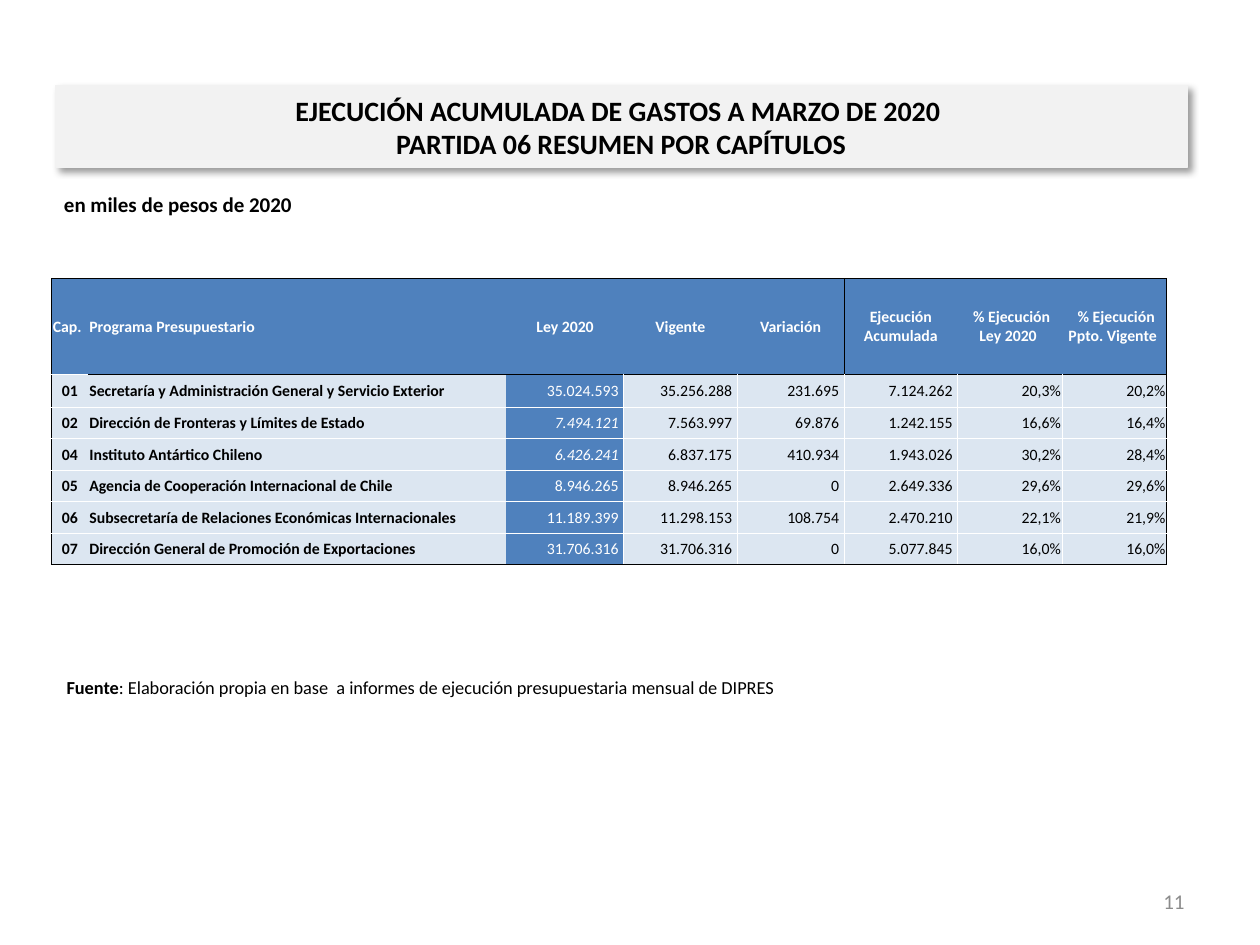
from lxml import etree
from pptx import Presentation
from pptx.dml.color import RGBColor
from pptx.enum.shapes import MSO_SHAPE
from pptx.enum.text import MSO_ANCHOR, PP_ALIGN
from pptx.oxml import parse_xml
from pptx.oxml.ns import nsdecls, qn
from pptx.util import Inches, Pt

LEFT, CENTER, RIGHT = PP_ALIGN.LEFT, PP_ALIGN.CENTER, PP_ALIGN.RIGHT
TOP, MIDDLE = MSO_ANCHOR.TOP, MSO_ANCHOR.MIDDLE
RECTANGLE = MSO_SHAPE.RECTANGLE

BLACK = RGBColor(0x00, 0x00, 0x00)
WHITE = RGBColor(0xFF, 0xFF, 0xFF)
GREY = RGBColor(0x8C, 0x8C, 0x8C)
BANNER = RGBColor(0xF2, 0xF2, 0xF2)
BLUE = RGBColor(0x4F, 0x81, 0xBD)
PALE_BLUE = RGBColor(0xDC, 0xE6, 0xF1)
FONT = "Calibri"

COL_WIDTHS = [0.29, 3.32, 0.93, 0.9, 0.85, 0.9, 0.83, 0.83]
ROW_HEIGHTS = [0.76, 0.26] + [0.25] * 5
HEADERS = ["Cap.", "Programa Presupuestario", "Ley 2020", "Vigente", "Variación",
           "Ejecución Acumulada", " % Ejecución Ley 2020 ", " % Ejecución Ppto. Vigente "]
CHAPTERS = [
    ["01", "Secretaría y Administración General y Servicio Exterior",
     "35.024.593", "35.256.288", "231.695", "7.124.262", "20,3%", "20,2%"],
    ["02", "Dirección de Fronteras y Límites de Estado",
     "7.494.121", "7.563.997", "69.876", "1.242.155", "16,6%", "16,4%"],
    ["04", "Instituto Antártico Chileno",
     "6.426.241", "6.837.175", "410.934", "1.943.026", "30,2%", "28,4%"],
    ["05", "Agencia de Cooperación Internacional de Chile",
     "8.946.265", "8.946.265", "0", "2.649.336", "29,6%", "29,6%"],
    ["06", "Subsecretaría de Relaciones Económicas Internacionales",
     "11.189.399", "11.298.153", "108.754", "2.470.210", "22,1%", "21,9%"],
    ["07", "Dirección General de Promoción de Exportaciones",
     "31.706.316", "31.706.316", "0", "5.077.845", "16,0%", "16,0%"],
]
LAW_COL, VARIATION_COL, PERCENT_COL = 2, 4, 6
ITALIC_ROWS = (2, 3)


def add_run(p, text, size, color=BLACK, bold=False, italic=False):
    r = p.add_run()
    r.text = text
    r.font.name, r.font.size = FONT, Pt(size)
    r.font.bold, r.font.italic = bold, italic
    r.font.color.rgb = color


def add_label(s, box, runs, size, color=BLACK, align=LEFT, anchor=TOP):
    """Text box whose runs are (text, bold) pairs."""
    tf = s.shapes.add_textbox(*map(Inches, box)).text_frame
    tf.word_wrap = True
    tf.vertical_anchor = anchor
    p = tf.paragraphs[0]
    p.alignment = align
    for text, bold in runs:
        add_run(p, text, size, color, bold)


def add_banner(s, box):
    sp = s.shapes.add_shape(RECTANGLE, *map(Inches, box))
    sp.fill.solid()
    sp.fill.fore_color.rgb = BANNER
    sp.line.color.rgb = BANNER
    sp.line.width = Pt(0.75)
    # Soft shadow towards the lower right
    sp.shadow.inherit = False
    sp.element.spPr.find(qn("a:effectLst")).append(parse_xml(
        f'<a:outerShdw {nsdecls("a")} blurRad="{Pt(4)}" dist="{Pt(3)}" dir="2700000" '
        'algn="tl" rotWithShape="0"><a:srgbClr val="000000"><a:alpha val="40000"/>'
        '</a:srgbClr></a:outerShdw>'))
    tf = sp.text_frame
    tf.word_wrap = True
    tf.vertical_anchor = MIDDLE
    p = tf.paragraphs[0]
    p.alignment = CENTER
    add_run(p, "EJECUCIÓN ACUMULADA DE GASTOS A MARZO DE 2020 ", 16, bold=True)
    p.add_line_break()
    add_run(p, "PARTIDA 06 RESUMEN POR CAPÍTULOS", 16, bold=True)


def vertical_edge(row, edge):
    """Colour of the vertical line before column number `edge`."""
    if edge in (0, len(HEADERS)):
        return BLACK
    if row == 0:
        return BLACK if edge == VARIATION_COL + 1 else None
    return WHITE if edge > LAW_COL else None


def horizontal_edge(edge, col):
    """Colour of the horizontal line above row number `edge`."""
    if edge in (0, len(CHAPTERS) + 1) or (edge == 1 and col > 0):
        return BLACK
    return WHITE


def set_borders(cell, row, col):
    tcPr = cell._tc.get_or_add_tcPr()
    edges = {"lnL": vertical_edge(row, col), "lnR": vertical_edge(row, col + 1),
             "lnT": horizontal_edge(row, col), "lnB": horizontal_edge(row + 1, col)}
    for tag, color in edges.items():
        ln = etree.SubElement(tcPr, qn(f"a:{tag}"), w=str(Pt(0.5)))
        if color is None:
            etree.SubElement(ln, qn("a:noFill"))
        else:
            fill = etree.SubElement(ln, qn("a:solidFill"))
            etree.SubElement(fill, qn("a:srgbClr"), val=str(color))


def cell_align(row, col):
    if row == 0:
        return LEFT if col < LAW_COL else CENTER
    return {0: CENTER, 1: LEFT}.get(col, RIGHT)


def fill_cell(cell, text, row, col):
    header = row == 0
    on_blue = header or col == LAW_COL
    amount = not header and LAW_COL <= col < PERCENT_COL
    set_borders(cell, row, col)
    cell.fill.solid()
    cell.fill.fore_color.rgb = BLUE if on_blue else PALE_BLUE
    cell.margin_left = cell.margin_top = Inches(0.01)
    cell.margin_right = Inches(0.04 if amount else 0.01)
    cell.margin_bottom = 0
    cell.vertical_anchor = MIDDLE
    p = cell.text_frame.paragraphs[0]
    p.alignment = cell_align(row, col)
    add_run(p, text, 9, WHITE if on_blue else BLACK, bold=header or col < LAW_COL,
            italic=col == LAW_COL and row in ITALIC_ROWS)


def add_budget_table(s, box):
    rows = [HEADERS] + CHAPTERS
    table = s.shapes.add_table(len(rows), len(HEADERS), *map(Inches, box)).table
    table.first_row = table.horz_banding = False
    for column, width in zip(table.columns, COL_WIDTHS):
        column.width = Inches(width)
    for table_row, height in zip(table.rows, ROW_HEIGHTS):
        table_row.height = Inches(height)
    for i, texts in enumerate(rows):
        for j, text in enumerate(texts):
            fill_cell(table.cell(i, j), text, i, j)


def main():
    prs = Presentation()
    prs.slide_width, prs.slide_height = Inches(10), Inches(7.5)
    s = prs.slides.add_slide(prs.slide_layouts[6])

    # Page number, source and unit
    add_label(s, (7.17, 6.95, 2.33, 0.4), [("11", False)], 12, GREY, RIGHT, MIDDLE)
    add_label(s, (0.43, 5.32, 9.19, 0.4),
              [("Fuente", True),
               (": Elaboración propia en base  a informes de ejecución "
                "presupuestaria mensual de DIPRES", False)], 10.5)
    add_label(s, (0.41, 1.47, 9, 0.5), [("en miles de pesos de 2020", True)], 12)

    # Title and table
    add_banner(s, (0.44, 0.68, 8.98, 0.65))
    add_budget_table(s, (0.41, 2.21, sum(COL_WIDTHS), sum(ROW_HEIGHTS)))

    prs.save("out.pptx")


if __name__ == "__main__":
    main()
